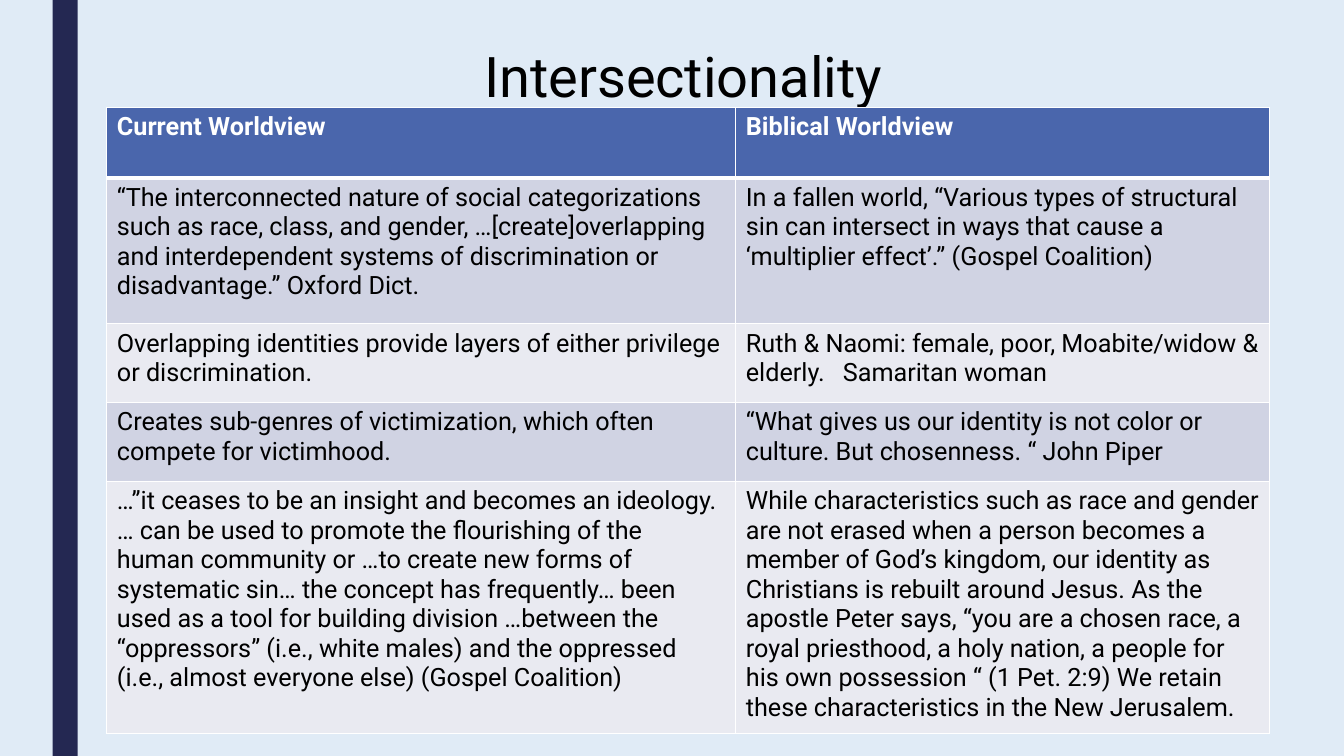
from lxml import etree
from pptx import Presentation
from pptx.dml.color import RGBColor
from pptx.enum import shapes, text
from pptx.oxml.ns import qn
from pptx.util import Pt

BACKGROUND = RGBColor(0xE0, 0xEB, 0xF6)
NAVY = RGBColor(0x24, 0x28, 0x52)
BLUE = RGBColor(0x4A, 0x66, 0xAC)
BAND_DARK = RGBColor(0xD0, 0xD3, 0xE3)
BAND_LIGHT = RGBColor(0xE9, 0xEA, 0xF1)
WHITE = RGBColor(0xFF, 0xFF, 0xFF)
BLACK = RGBColor(0, 0, 0)

ROWS = [
    ("Current Worldview", "Biblical Worldview"),
    ("“The interconnected nature of social categorizations such as race, class, and gender, "
     "…[create]overlapping and interdependent systems of discrimination or disadvantage.” Oxford Dict.",
     "In a fallen world, “Various types of structural sin can intersect in ways that cause a "
     "‘multiplier effect’.” (Gospel Coalition)"),
    ("Overlapping identities provide layers of either privilege or discrimination.",
     "Ruth & Naomi: female, poor, Moabite/widow & elderly.\tSamaritan woman"),
    ("Creates sub-genres of victimization, which often compete for victimhood.",
     "“What gives us our identity is not color or culture. But chosenness. “ John Piper"),
    ("…”it ceases to be an insight and becomes an ideology. … can be used to promote the flourishing "
     "of the human community or …to create new forms of systematic sin… the concept has frequently… "
     "been used as a tool for building division …between the “oppressors” (i.e., white males) and the "
     "oppressed (i.e., almost everyone else) (Gospel Coalition)",
     "While characteristics such as race and gender are not erased when a person becomes a member of "
     "God’s kingdom, our identity as Christians is rebuilt around Jesus. As the apostle Peter says, "
     "“you are a chosen race, a royal priesthood, a holy nation, a people for his own possession “ "
     "(1 Pet. 2:9) We retain these characteristics in the New Jerusalem."),
]
COLUMN_WIDTHS = [449.3, 381.3]
ROW_HEIGHTS = [50.4, 104.4, 56.2, 56.2, 180]


def set_font(p, size, color, bold=False):
    for name, value in {"name": "Roboto", "size": Pt(size), "bold": bold}.items():
        setattr(p.font, name, value)
    p.font.color.rgb = color


def add_border(cell, side, width):
    ln = etree.SubElement(cell._tc.get_or_add_tcPr(), qn(f"a:ln{side}"), w=str(Pt(width)))
    fill = etree.SubElement(ln, qn("a:solidFill"))
    etree.SubElement(fill, qn("a:srgbClr"), val=str(WHITE))


prs = Presentation()
prs.slide_width, prs.slide_height = Pt(960), Pt(540)
s = prs.slides.add_slide(prs.slide_layouts[5])
s.background.fill.solid()
s.background.fill.fore_color.rgb = BACKGROUND

bar = s.shapes.add_shape(shapes.MSO_SHAPE.RECTANGLE, Pt(37.5), Pt(0), Pt(18), Pt(540))
bar.shadow.inherit = False
bar.fill.solid()
bar.fill.fore_color.rgb = NAVY
bar.line.fill.background()

title = s.shapes.title
title.left, title.top, title.width, title.height = Pt(105.8), Pt(26), Pt(764.6), Pt(55.4)
tf = title.text_frame
tf.text = "Intersectionality"
tf.auto_size = text.MSO_AUTO_SIZE.NONE
tf.vertical_anchor = text.MSO_ANCHOR.TOP
tf.paragraphs[0].alignment = text.PP_ALIGN.CENTER
set_font(tf.paragraphs[0], 40, BLACK)

table = s.shapes.add_table(len(ROWS), len(COLUMN_WIDTHS), Pt(76.3), Pt(76.5),
                           Pt(sum(COLUMN_WIDTHS)), Pt(sum(ROW_HEIGHTS))).table
for column, width in zip(table.columns, COLUMN_WIDTHS):
    column.width = Pt(width)
for i, (row, height, row_texts) in enumerate(zip(table.rows, ROW_HEIGHTS, ROWS)):
    row.height = Pt(height)
    is_header = i == 0
    band = BLUE if is_header else BAND_DARK if i % 2 else BAND_LIGHT
    for cell, cell_text in zip(row.cells, row_texts):
        for side in "LRTB":
            under_header = (i, side) in ((0, "B"), (1, "T"))
            add_border(cell, side, 3 if under_header else 1)
        cell.fill.solid()
        cell.fill.fore_color.rgb = band
        cell.text = cell_text
        p = cell.text_frame.paragraphs[0]
        if "\t" in cell_text:
            tabs = etree.SubElement(p._p.get_or_add_pPr(), qn("a:tabLst"))
            etree.SubElement(tabs, qn("a:tab"), pos=str(Pt(69.3)), algn="l")
        set_font(p, 18, WHITE if is_header else BLACK, is_header)

prs.save("out.pptx")
